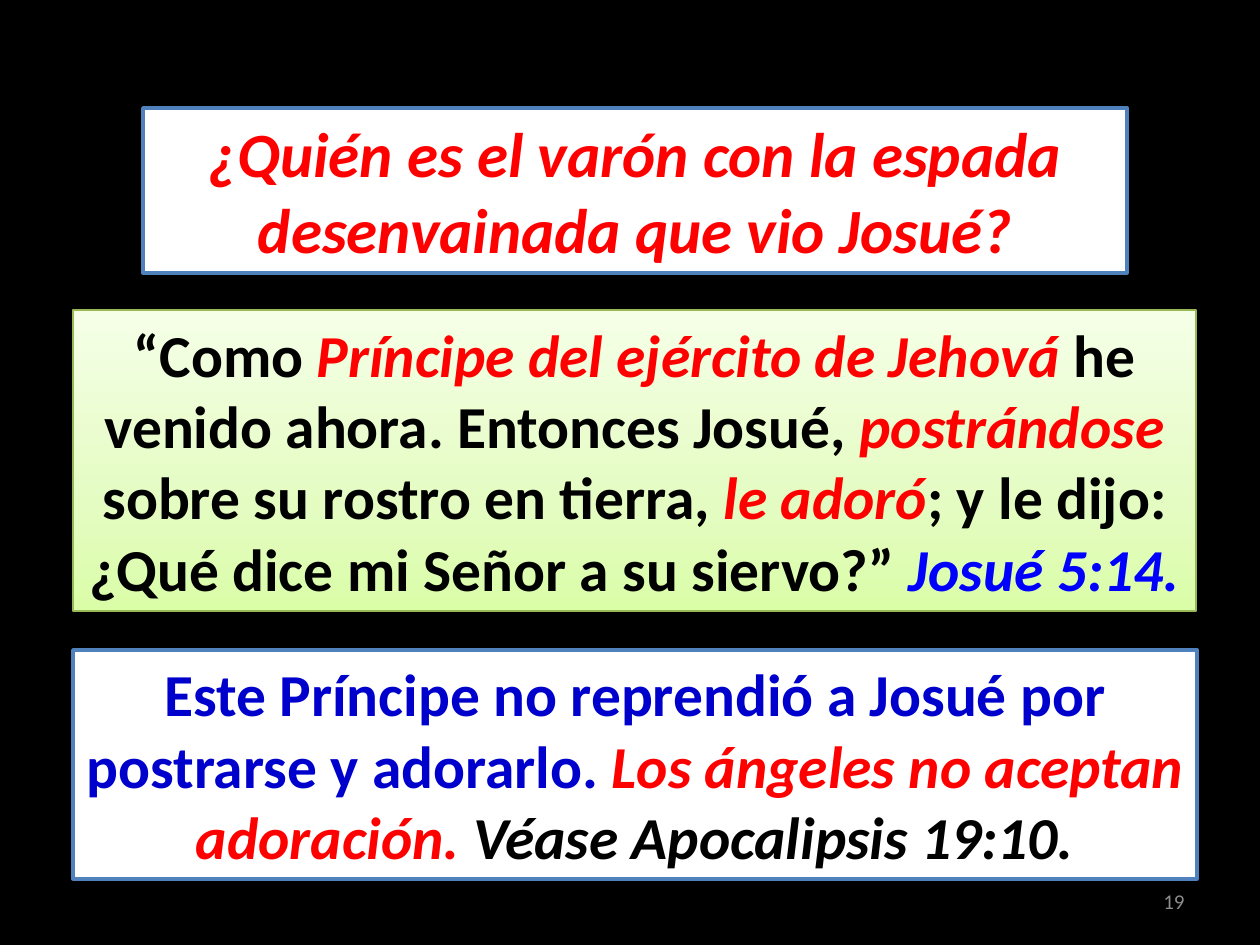
from lxml import etree
from pptx import Presentation
from pptx import util as u
from pptx.dml.color import RGBColor
from pptx.enum import shapes, text
from pptx.oxml import parse_xml

PX_PER_INCH = 126
NS = 'xmlns:a="http://schemas.openxmlformats.org/drawingml/2006/main"'
BLACK, WHITE, RED, BLUE, NAVY = "000000", "FFFFFF", "FF0000", "0000FF", "0000CC"
STEEL, OLIVE, GREY = "4F81BD", "98B955", "8C8C8C"


def px(length):
    return u.Emu(round(length * 914400 / PX_PER_INCH))


def rgb(value):
    return RGBColor.from_string(value)


class SlideBuilder:
    font = "Calibri"

    def __init__(self, slide):
        self.slide = slide

    def background(self, color):
        fill = self.slide.background.fill
        fill.solid()
        fill.fore_color.rgb = rgb(color)

    def set_text(self, shape, runs, size, align, bold=True, outlined=True):
        """Fill a shape with one paragraph of (text, colour, italic) runs."""
        frame = shape.text_frame
        frame.word_wrap = True
        frame.vertical_anchor = text.MSO_ANCHOR.MIDDLE
        paragraph = frame.paragraphs[0]
        paragraph.alignment = align
        for words, color, italic in runs:
            run = paragraph.add_run()
            run.text = words
            font = run.font
            font.name, font.size = self.font, u.Pt(size)
            font.bold, font.italic = bold, italic
            font.color.rgb = rgb(color)
            if outlined:
                font._element.insert(0, parse_xml(
                    f'<a:ln {NS} w="9525"><a:solidFill><a:srgbClr val="{color}"/>'
                    '</a:solidFill></a:ln>'))

    def panel(self, box, runs, size, line=STEEL, line_width=2):
        shape = self.slide.shapes.add_shape(
            shapes.MSO_SHAPE.RECTANGLE, *map(px, box))
        shape.shadow.inherit = False
        shape.fill.solid()
        shape.fill.fore_color.rgb = rgb(WHITE)
        shape.line.color.rgb = rgb(line)
        shape.line.width = u.Pt(line_width)
        self.set_text(shape, runs, size, text.PP_ALIGN.CENTER)
        shape.text_frame.auto_size = text.MSO_AUTO_SIZE.SHAPE_TO_FIT_TEXT
        return shape

    def gradient(self, shape, stops):
        """Fill a shape upwards with (percent, colour) stops."""
        shape.fill.gradient()
        shape.fill.gradient_angle = 90
        stop_list = shape._element.spPr.find("{*}gradFill/{*}gsLst")
        for old_stop in list(stop_list):
            stop_list.remove(old_stop)
        for percent, color in stops:
            stop_list.append(parse_xml(
                f'<a:gs {NS} pos="{percent * 1000}"><a:srgbClr val="{color}"/></a:gs>'))

    def drop_shadow(self, shape, color, opacity):
        effects = shape._element.spPr.find("{*}effectLst")
        effects.append(etree.fromstring(
            f'<a:outerShdw {NS} blurRad="40000" dist="20000" dir="5400000" '
            f'rotWithShape="0"><a:srgbClr val="{color}">'
            f'<a:alpha val="{opacity * 1000}"/></a:srgbClr></a:outerShdw>'))

    def page_number(self, box, number):
        shape = self.slide.shapes.add_textbox(*map(px, box))
        self.set_text(shape, [(number, GREY, False)], 12, text.PP_ALIGN.RIGHT,
                      bold=False, outlined=False)


def main():
    presentation = Presentation()
    presentation.slide_width, presentation.slide_height = px(1260), px(945)
    builder = SlideBuilder(presentation.slides.add_slide(presentation.slide_layouts[6]))
    builder.background(BLACK)
    builder.page_number((903, 876, 294, 50), "19")

    builder.panel((143, 108, 984, 165), [
        ("¿Quién es el varón con la espada desenvainada que vio Josué?", RED, True),
    ], 36)

    verse = builder.panel((73, 310, 1123, 301), [
        ("“Como ", BLACK, False),
        ("Príncipe del ejército de Jehová ", RED, True),
        ("he venido ahora. Entonces Josué, ", BLACK, False),
        ("postrándose ", RED, True),
        ("sobre su rostro en tierra, ", BLACK, False),
        ("le adoró", RED, True),
        ("; y le dijo: ¿Qué dice mi Señor a su siervo?” ", BLACK, False),
        ("Josué 5:14. ", BLUE, True),
    ], 34, OLIVE, 0.75)
    builder.gradient(verse, [(0, "DAFDA7"), (35, "E4FCC2"), (100, "F5FFE7")])
    builder.drop_shadow(verse, BLACK, 38)

    builder.panel((73, 650, 1124, 229), [
        ("Este Príncipe no reprendió a Josué por postrarse y adorarlo. ", NAVY, False),
        ("Los ángeles no aceptan adoración. ", RED, True),
        ("Véase Apocalipsis 19:10.", BLACK, True),
    ], 34)

    presentation.save("out.pptx")


if __name__ == "__main__":
    main()
